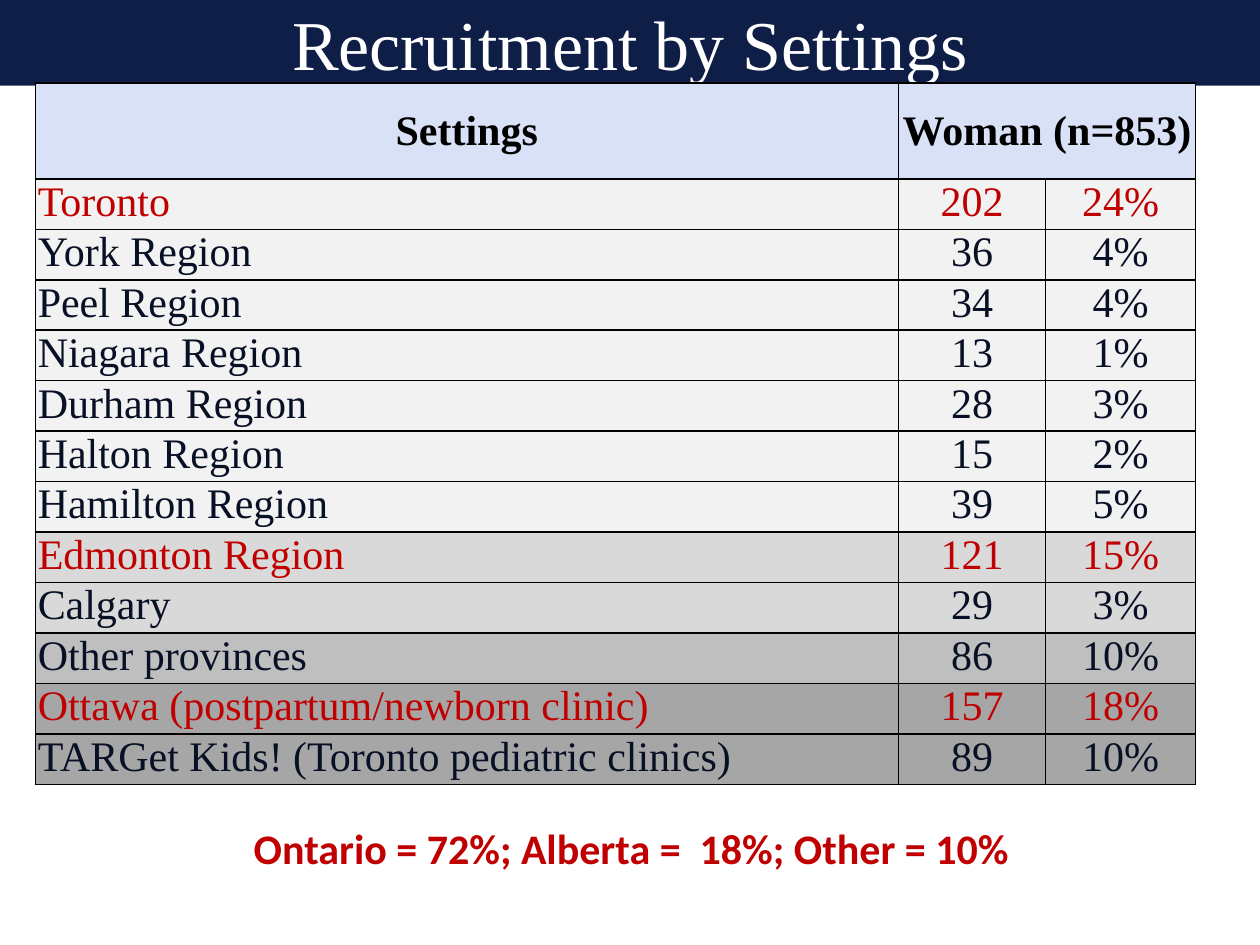
from pptx import Presentation
from pptx.dml.color import RGBColor
from pptx.enum.shapes import MSO_SHAPE
from pptx.enum.text import MSO_ANCHOR, PP_ALIGN
from pptx.oxml import parse_xml
from pptx.oxml.ns import nsdecls

PX = 9144
NAVY = RGBColor(0x0E, 0x1E, 0x46)
INK = RGBColor(0x08, 0x10, 0x25)
RED = RGBColor(0xC0, 0x00, 0x00)
BLACK = RGBColor(0x00, 0x00, 0x00)
WHITE = RGBColor(0xFF, 0xFF, 0xFF)
HEADER = RGBColor(0xD9, 0xE1, 0xF7)
GTA = RGBColor(0xF2, 0xF2, 0xF2)
ALBERTA = RGBColor(0xD9, 0xD9, 0xD9)
OTHER = RGBColor(0xBF, 0xBF, 0xBF)
CLINIC = RGBColor(0xA6, 0xA6, 0xA6)
SERIF = "Times New Roman"

COLUMNS = (685, 117, 119)
HEADER_H, ROW_H = 76, 40
SETTINGS = [
    ("Toronto", "202", "24%", GTA, RED),
    ("York Region", "36", "4%", GTA, INK),
    ("Peel Region", "34", "4%", GTA, INK),
    ("Niagara Region", "13", "1%", GTA, INK),
    ("Durham Region", "28", "3%", GTA, INK),
    ("Halton Region", "15", "2%", GTA, INK),
    ("Hamilton Region", "39", "5%", GTA, INK),
    ("Edmonton Region", "121", "15%", ALBERTA, RED),
    ("Calgary", "29", "3%", ALBERTA, INK),
    ("Other provinces", "86", "10%", OTHER, INK),
    ("Ottawa (postpartum/newborn clinic)", "157", "18%", CLINIC, RED),
    ("TARGet Kids! (Toronto pediatric clinics)", "89", "10%", CLINIC, INK),
]


def emu(box):
    return [v * PX for v in box]


def set_margins(item, side, top):
    item.margin_left = item.margin_right = side * PX
    item.margin_top, item.margin_bottom = top * PX, 0


def write(tf, text, font, size, color, bold=False, align=PP_ALIGN.CENTER):
    tf.text = text
    p = tf.paragraphs[0]
    p.alignment = align
    f = p.runs[0].font
    f.name, f.bold = font, bold
    f.size = size * 12700
    f.color.rgb = color


def add_title(s, box, text):
    sp = s.shapes.add_shape(MSO_SHAPE.RECTANGLE, *emu(box))
    sp.shadow.inherit = False
    sp.fill.solid()
    sp.fill.fore_color.rgb = NAVY
    sp.line.fill.background()
    tf = sp.text_frame
    set_margins(tf, 0, 0)
    tf.vertical_anchor = MSO_ANCHOR.MIDDLE
    write(tf, text, SERIF, 40, WHITE)


def add_summary(s, box, text):
    tf = s.shapes.add_textbox(*emu(box)).text_frame
    tf.word_wrap = True
    set_margins(tf, 10, 3)
    tf.vertical_anchor = MSO_ANCHOR.TOP
    write(tf, text, "Calibri", 24, RED, bold=True)


def style_cell(cell, fill):
    set_margins(cell, 2, 0)
    tcPr = cell._tc.get_or_add_tcPr()
    for side in ("lnL", "lnR", "lnT", "lnB"):
        tcPr.append(parse_xml(
            f'<a:{side} {nsdecls("a")} w="12700"><a:solidFill>'
            f'<a:srgbClr val="{BLACK}"/></a:solidFill></a:{side}>'))
    cell.fill.solid()
    cell.fill.fore_color.rgb = fill


def add_settings_table(s, left, top):
    height = HEADER_H + ROW_H * len(SETTINGS)
    box = (left, top, sum(COLUMNS), height)
    table = s.shapes.add_table(len(SETTINGS) + 1, len(COLUMNS), *emu(box)).table
    for column, width in zip(table.columns, COLUMNS):
        column.width = width * PX
    for i, row in enumerate(table.rows):
        row.height = (ROW_H if i else HEADER_H) * PX

    for cell in table.rows[0].cells:
        style_cell(cell, HEADER)
    table.cell(0, 1).merge(table.cell(0, 2))
    for c, text in enumerate(("Settings", "Woman (n=853)")):
        cell = table.cell(0, c)
        cell.vertical_anchor = MSO_ANCHOR.MIDDLE
        write(cell.text_frame, text, SERIF, 24, BLACK, bold=True)

    for r, (*values, fill, color) in enumerate(SETTINGS, 1):
        for c, text in enumerate(values):
            cell = table.cell(r, c)
            style_cell(cell, fill)
            align = PP_ALIGN.CENTER if c else PP_ALIGN.LEFT
            write(cell.text_frame, text, SERIF, 24, color, align=align)


def main():
    prs = Presentation()
    prs.slide_width, prs.slide_height = 1000 * PX, 750 * PX
    s = prs.slides.add_slide(prs.slide_layouts[6])
    add_title(s, (0, 0, 1000, 68), "Recruitment by Settings")
    add_summary(s, (1, 650, 1000, 84), "Ontario = 72%; Alberta =  18%; Other = 10%")
    add_settings_table(s, 28, 66)
    prs.save("out.pptx")


if __name__ == "__main__":
    main()
